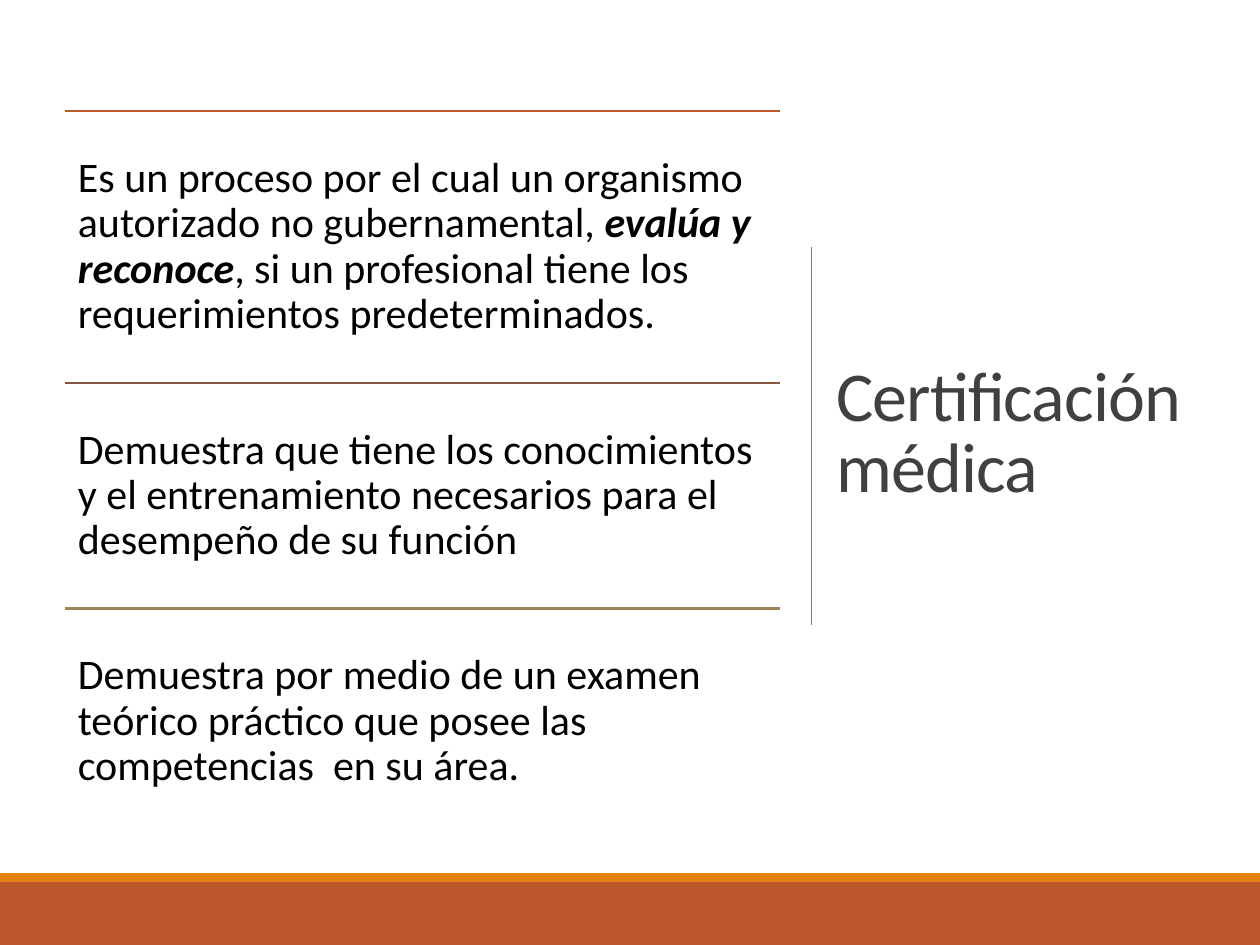
from lxml.etree import SubElement
from pptx import Presentation
from pptx.dml.color import RGBColor
from pptx.enum.shapes import MSO_CONNECTOR, MSO_SHAPE
from pptx.enum.text import MSO_ANCHOR, PP_ALIGN
from pptx.oxml.ns import qn
from pptx.util import Inches, Pt

TITLE = "Certificación médica"
# rule colour, height, text runs as (text, emphasised)
SECTIONS = [
    ("BD582C", 2.16, [
        ("Es un proceso por el cual un organismo autorizado no gubernamental, ", False),
        ("evalúa y reconoce", True),
        (", si un profesional tiene los requerimientos predeterminados.", False),
    ]),
    ("865640", 1.79, [
        ("Demuestra que tiene los conocimientos y el entrenamiento necesarios "
         "para el desempeño de su función", False),
    ]),
    ("9B8357", 1.79, [
        ("Demuestra por medio de un examen teórico práctico que posee las "
         "competencias  en su área.", False),
    ]),
]
# top, height, colour
FOOTER_BANDS = [(7, 0.5, "BD582C"), (6.93, 0.07, "E48312")]
LEFT, TOP, WIDTH = 0.52, 0.88, 5.67


def rgb(value):
    return RGBColor.from_string(value)


def add_line(slide, x1, y1, x2, y2, color, width):
    line = slide.shapes.add_connector(
        MSO_CONNECTOR.STRAIGHT, Inches(x1), Inches(y1), Inches(x2), Inches(y2))
    line.line.color.rgb = rgb(color)
    line.line.width = Pt(width)
    SubElement(line._element.spPr, qn("a:effectLst"))


def add_band(slide, top, height, color):
    sp = slide.shapes.add_shape(
        MSO_SHAPE.RECTANGLE, 0, Inches(top), Inches(10), Inches(height))
    sp.shadow.inherit = False
    sp.fill.solid()
    sp.fill.fore_color.rgb = rgb(color)
    sp.line.fill.background()


def format_paragraph(p, size, color, spacing):
    p.alignment = PP_ALIGN.LEFT
    p.line_spacing = spacing
    p.font.name = "Calibri"
    p.font.size = Pt(size)
    p.font.color.rgb = rgb(color)


def add_title(slide):
    title = slide.shapes.title
    title.left, title.top = Inches(6.54), Inches(0.69)
    title.width, title.height = Inches(3.2), Inches(5.53)
    tf = title.text_frame
    tf.text = TITLE
    tf.word_wrap = True
    tf.vertical_anchor = MSO_ANCHOR.MIDDLE
    p = tf.paragraphs[0]
    format_paragraph(p, 40, "404040", 0.85)
    p.runs[0].font._element.set("spc", "-50")


def add_section(slide, top, height, color, runs):
    add_line(slide, LEFT, top, LEFT + WIDTH, top, color, 1.25)
    box = slide.shapes.add_textbox(
        Inches(LEFT), Inches(top), Inches(WIDTH), Inches(height))
    tf = box.text_frame
    tf.word_wrap = True
    tf.vertical_anchor = MSO_ANCHOR.MIDDLE
    tf.margin_left = tf.margin_right = tf.margin_top = tf.margin_bottom = Inches(0.1)
    p = tf.paragraphs[0]
    format_paragraph(p, 24, "000000", 0.9)
    for text, emphasised in runs:
        r = p.add_run()
        r.text = text
        if emphasised:
            r.font.bold = r.font.italic = True


def main():
    prs = Presentation()
    prs.slide_width, prs.slide_height = Inches(10), Inches(7.5)
    slide = prs.slides.add_slide(prs.slide_layouts[5])
    for band in FOOTER_BANDS:
        add_band(slide, *band)
    add_line(slide, 6.44, 1.96, 6.44, 4.96, "808080", 0.5)
    add_title(slide)
    top = TOP
    for color, height, runs in SECTIONS:
        add_section(slide, top, height, color, runs)
        top += height
    prs.save("out.pptx")


if __name__ == "__main__":
    main()
